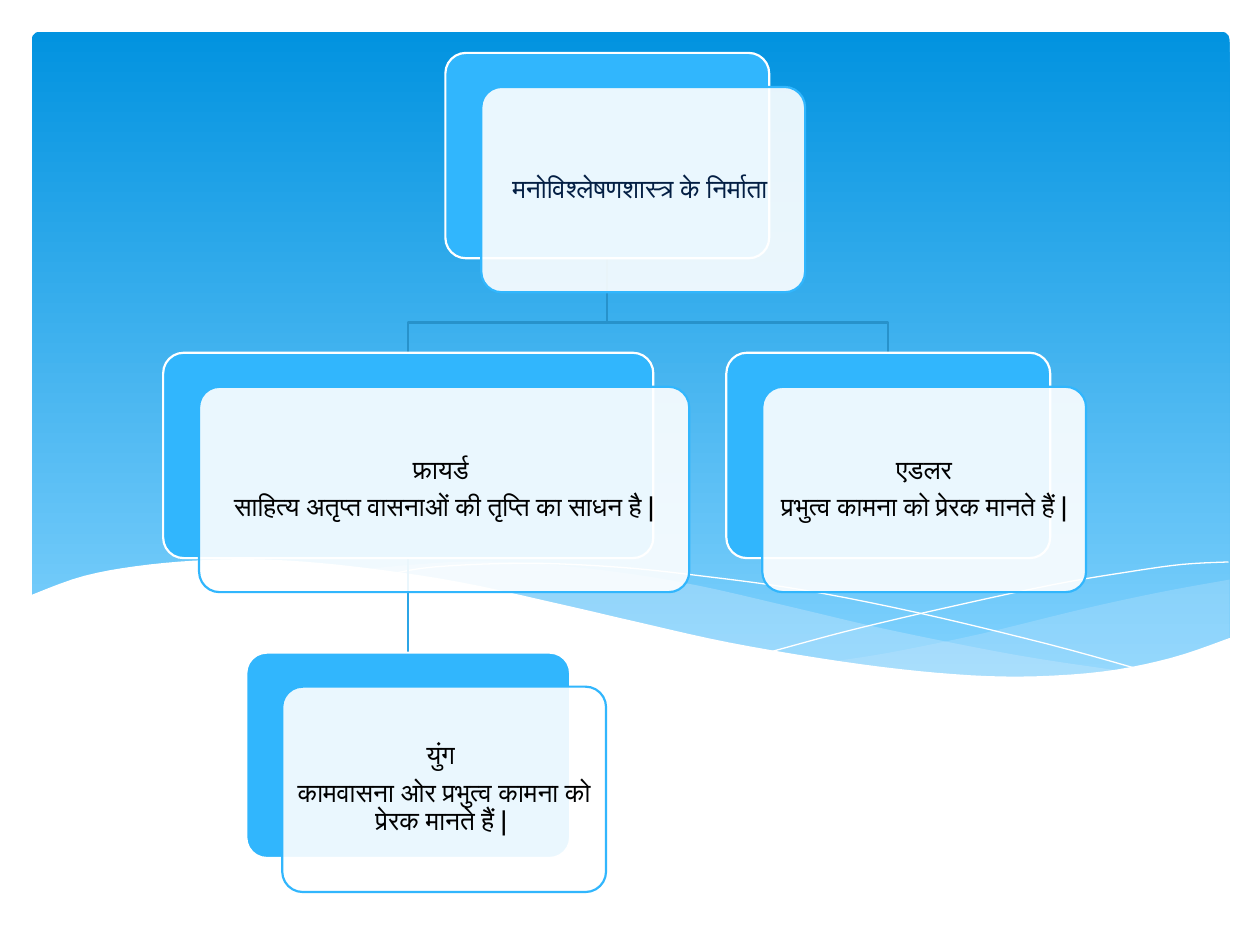
"""Build a slide showing the founders of psychoanalysis as a tree of layered cards."""
import pptx
import pptx.util
import pptx.dml.color
import pptx.enum.shapes
import pptx.enum.text
import pptx.oxml
import pptx.oxml.ns

COLORS = {
    "sky_top": "0293E0", "sky_bottom": "83D3FE", "mist": "C6E7FC", "white": "FFFFFF",
    "card": "31B6FD", "elbow": "2792CB", "stem": "2CA5E6", "root_text": "041F44", "text": "000000",
}
SLIDE_W, SLIDE_H = 10, 7.5
CARD_W, WIDE_W, CARD_H = 2.57, 3.89, 1.63
SHIFT_X, SHIFT_Y = 0.285, 0.27
ROW_TOP, ROW_STEP = 0.42, 2.38
BRANCH_GAP = 0.24

CARDS = [
    {"center": 4.82, "row": 0, "width": CARD_W, "color": "root_text", "parent": None,
     "lines": ["मनोविश्लेषणशास्त्र के निर्माता "]},
    {"center": 3.24, "row": 1, "width": WIDE_W, "color": "text", "parent": 0,
     "lines": ["फ्रायर्ड ", "साहित्य अतृप्त वासनाओं की तृप्ति का साधन है |"]},
    {"center": 3.24, "row": 2, "width": CARD_W, "color": "text", "parent": 1,
     "lines": ["युंग ", "कामवासना ओर प्रभुत्व कामना को प्रेरक मानते हैं | "]},
    {"center": 7.05, "row": 1, "width": CARD_W, "color": "text", "parent": 0,
     "lines": ["एडलर", "प्रभुत्व कामना को प्रेरक मानते हैं |"]},
]

BANDS = [
    {"fill": "mist", "alpha": 29, "edges": [
        [(9.76, 4.6), (9.21, 4.7), (8.61, 4.83), (7.79, 5.03), (7.06, 5.18), (6.61, 5.25)],
        [(6.61, 5.25), (7.19, 5.33), (7.69, 5.37), (8.14, 5.38), (8.63, 5.35), (9.13, 5.27),
         (9.49, 5.17), (9.76, 5.07)]]},
    {"fill": "mist", "alpha": 40, "edges": [
        [(8.93, 5.33), (8.07, 5.2), (7.06, 5), (6.29, 4.82), (5.55, 4.65), (4.89, 4.54),
         (4.2, 4.47), (3.61, 4.46), (2.86, 4.52)],
        [(2.86, 4.52), (3.62, 4.63), (4.49, 4.82), (5.3, 5.01), (6.01, 5.15), (6.8, 5.28),
         (7.48, 5.36), (8.07, 5.39), (8.57, 5.37), (8.93, 5.33)]]},
    {"line": "white", "edges": [
        [(3.09, 4.56), (3.44, 4.5), (4.16, 4.47), (4.89, 4.5), (5.56, 4.57), (6.36, 4.68),
         (7.27, 4.86), (8.31, 5.11), (9.07, 5.32)]]},
    {"line": "white", "edges": [
        [(6.13, 5.17), (6.72, 5.01), (7.48, 4.83), (8.36, 4.64), (8.95, 4.54), (9.38, 4.48),
         (9.75, 4.46)]]},
    {"fill": "white", "edges": [
        [(9.77, 5.06), (9.3, 5.22), (8.75, 5.33), (8.09, 5.37), (7.44, 5.34), (6.68, 5.25),
         (5.79, 5.1), (5.03, 4.93), (4.47, 4.8), (3.65, 4.62), (2.92, 4.51), (2.3, 4.45),
         (1.77, 4.44), (1.19, 4.48), (0.67, 4.57), (0.23, 4.73)],
        [(0.23, 5.89), (9.77, 5.89)]]},
]


def rgb(name):
    return pptx.dml.color.RGBColor.from_string(COLORS[name])


def smooth_curve(knots, steps=5):
    padded = [knots[0], *knots, knots[-1]]
    points = [knots[0]]
    for a, b, c, d in zip(padded, padded[1:], padded[2:], padded[3:]):
        for step in range(1, steps + 1):
            t = step / steps
            points.append(tuple(
                (2 * q + (r - p) * t + (2 * p - 5 * q + 4 * r - s) * t ** 2
                 + (3 * q - p - 3 * r + s) * t ** 3) / 2
                for p, q, r, s in zip(a, b, c, d)))
    return points


def paint(shape, fill=None, line=None, width=1.25, alpha=None):
    shape.shadow.inherit = False
    if fill:
        shape.fill.solid()
        shape.fill.fore_color.rgb = rgb(fill)
        if alpha:
            color = shape.fill._xPr.find(".//" + pptx.oxml.ns.qn("a:srgbClr"))
            color.append(pptx.oxml.parse_xml(
                f'<a:alpha {pptx.oxml.ns.nsdecls("a")} val="{alpha * 1000}"/>'))
    else:
        shape.fill.background()
    if line:
        shape.line.color.rgb = rgb(line)
        shape.line.width = pptx.util.Pt(width)
    else:
        shape.line.fill.background()


def add_outline(shapes, points, closed):
    spots = [(pptx.util.Inches(x), pptx.util.Inches(y)) for x, y in points]
    builder = shapes.build_freeform(*spots[0], scale=1.0)
    builder.add_line_segments(spots[1:], close=closed)
    return builder.convert_to_shape()


def add_rounded(shapes, left, top, width, height, rounding):
    shape = shapes.add_shape(
        pptx.enum.shapes.MSO_SHAPE.ROUNDED_RECTANGLE,
        *(pptx.util.Inches(size) for size in (left, top, width, height)))
    shape.adjustments[0] = rounding
    return shape


def add_backdrop(shapes):
    sky = add_rounded(shapes, 0.25, 0.25, 9.51, 5.18, 0.013)
    paint(sky)
    sky.fill.gradient()
    sky.fill.gradient_angle = 270
    for stop, position, name in zip(sky.fill.gradient_stops, (0, 1), ("sky_top", "sky_bottom")):
        stop.position = position
        stop.color.rgb = rgb(name)
    for band in BANDS:
        points = [point for edge in band["edges"] for point in smooth_curve(edge)]
        wave = add_outline(shapes, points, closed="fill" in band)
        paint(wave, band.get("fill"), band.get("line"), 0, band.get("alpha"))


def row_top(card):
    return ROW_TOP + card["row"] * ROW_STEP


def add_branch(shapes, parent, child):
    start, end = row_top(parent) + CARD_H, row_top(child)
    if parent["center"] == child["center"]:
        stem = shapes.add_connector(
            pptx.enum.shapes.MSO_CONNECTOR.STRAIGHT,
            *(pptx.util.Inches(v) for v in (parent["center"], start, child["center"], end)))
        stem.line.color.rgb = rgb("stem")
        stem.line.width = pptx.util.Pt(1.25)
        stem._element.spPr.append(pptx.oxml.parse_xml(
            f'<a:effectLst {pptx.oxml.ns.nsdecls("a")}/>'))
        return
    bend = end - BRANCH_GAP
    elbow = [(parent["center"], start), (parent["center"], bend),
             (child["center"], bend), (child["center"], end)]
    paint(add_outline(shapes, elbow, closed=False), line="elbow")


def add_card(shapes, card):
    left, top = card["center"] - card["width"] / 2, row_top(card)
    back = add_rounded(shapes, left, top, card["width"], CARD_H, 0.1)
    paint(back, "card", "white")
    front = add_rounded(shapes, left + SHIFT_X, top + SHIFT_Y, card["width"], CARD_H, 0.1)
    paint(front, "white", "card", alpha=90)
    frame = front.text_frame
    frame.word_wrap = True
    frame.vertical_anchor = pptx.enum.text.MSO_ANCHOR.MIDDLE
    frame.margin_left = frame.margin_right = pptx.util.Inches(0.06)
    frame.margin_top = frame.margin_bottom = pptx.util.Inches(0.1)
    for index, line in enumerate(card["lines"]):
        paragraph = frame.add_paragraph() if index else frame.paragraphs[0]
        paragraph.alignment = pptx.enum.text.PP_ALIGN.CENTER
        paragraph.line_spacing = 0.9
        paragraph.space_after = pptx.util.Pt(5.25)
        run = paragraph.add_run()
        run.text = line
        run.font.name = "Cabin"
        run.font.size = pptx.util.Pt(15)
        run.font.color.rgb = rgb(card["color"])


def main():
    deck = pptx.Presentation()
    deck.slide_width = pptx.util.Inches(SLIDE_W)
    deck.slide_height = pptx.util.Inches(SLIDE_H)
    shapes = deck.slides.add_slide(deck.slide_layouts[6]).shapes
    add_backdrop(shapes)
    for card in CARDS:
        if card["parent"] is not None:
            add_branch(shapes, CARDS[card["parent"]], card)
    for card in CARDS:
        add_card(shapes, card)
    deck.save("out.pptx")


if __name__ == "__main__":
    main()
